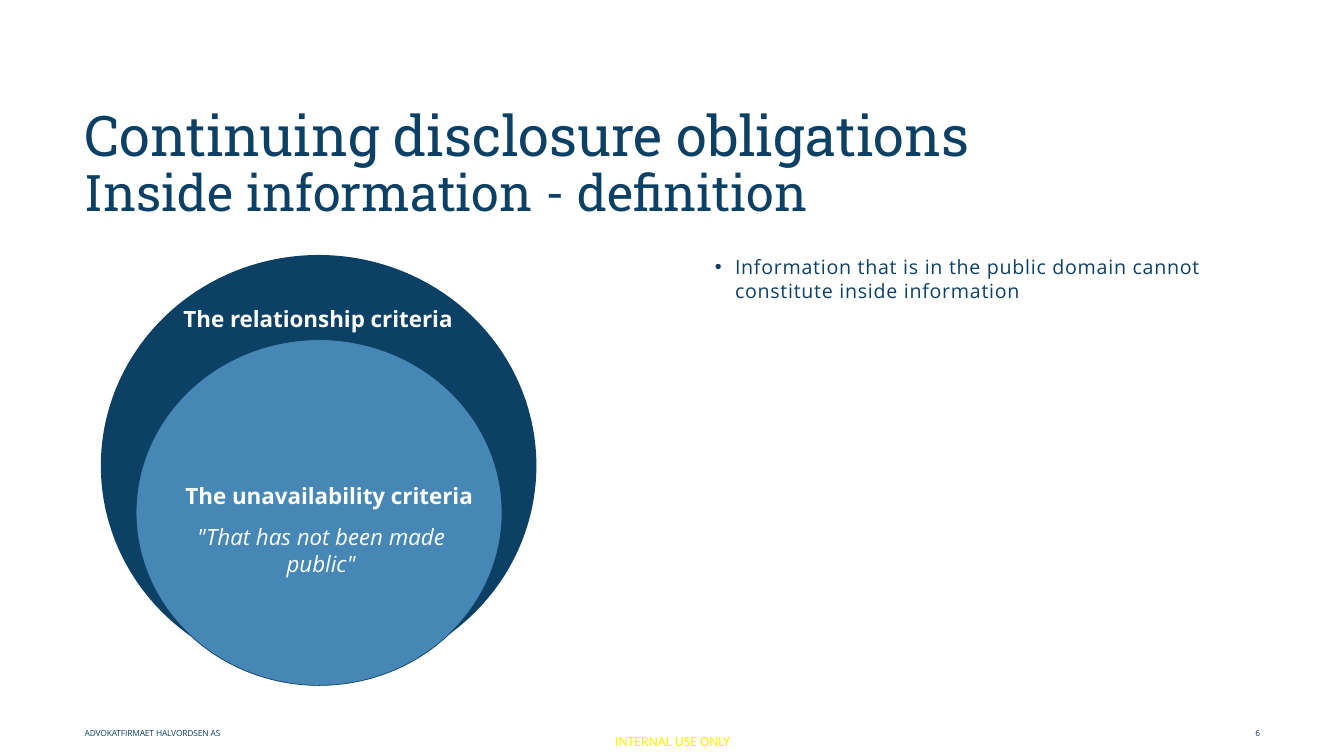
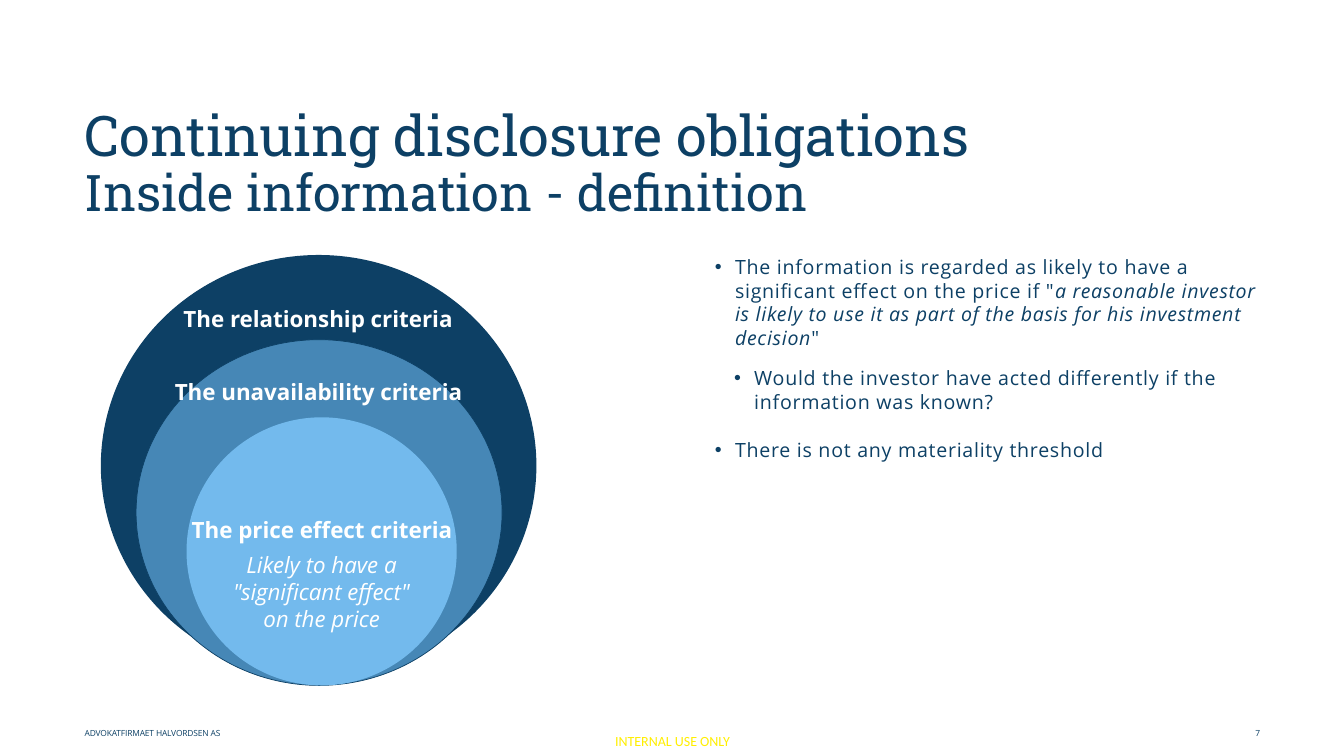
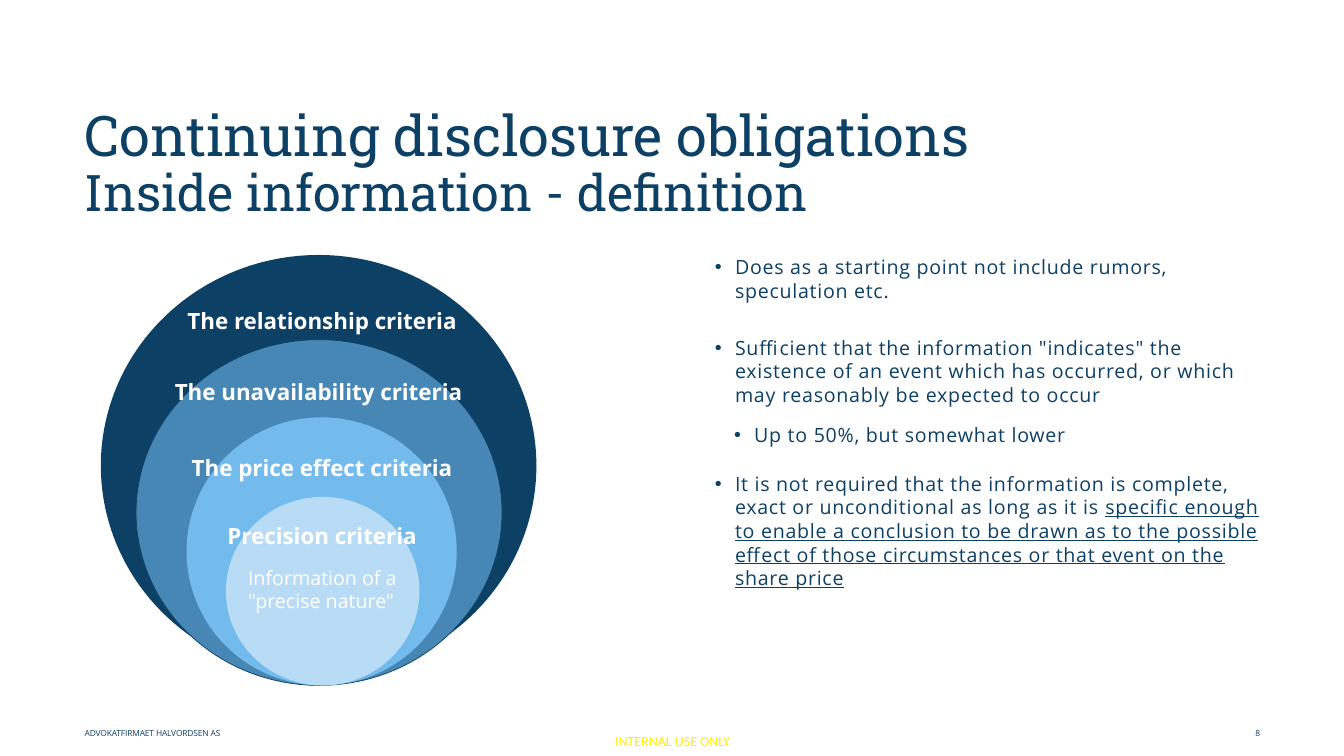
from lxml import etree
from pptx import Presentation
from pptx.dml.color import RGBColor
from pptx.enum.shapes import MSO_SHAPE
from pptx.enum.text import MSO_ANCHOR, MSO_AUTO_SIZE, PP_ALIGN
from pptx.oxml.ns import qn
from pptx.util import Inches, Pt

OVAL = MSO_SHAPE.OVAL
TOP, MIDDLE, BOTTOM = MSO_ANCHOR.TOP, MSO_ANCHOR.MIDDLE, MSO_ANCHOR.BOTTOM
LEFT, CENTER, RIGHT = PP_ALIGN.LEFT, PP_ALIGN.CENTER, PP_ALIGN.RIGHT
FIXED = MSO_AUTO_SIZE.NONE

NAVY, STEEL, SKY, PALE = "0D4065", "4687B6", "73BAED", "B9DCF6"
WHITE, YELLOW = "FFFFFF", "FFEF00"
HEAD, BODY, MARK = "Roboto Slab", "Open Sans", "Calibri"
EDGE, WIDE = 0.84, 11.66

RINGS = [
    (1, 2.53, 4.32, 4.18, NAVY, None),
    (1.35, 3.37, 3.63, 3.43, STEEL, NAVY),
    (1.85, 4.14, 2.68, 2.66, SKY, None),
    (2.24, 4.93, 1.92, 1.87, PALE, None),
]
RELATION = "The relationship criteria"
UNKNOWN = "The unavailability criteria"
PRICE = "The price effect criteria"

PAGES = [
    {
        "labels": [(1.78, 3.03, 2.75, RELATION), (1.71, 4.78, 3.11, UNKNOWN)],
        "quote": (1.63, 5.19, 3.11, 0.54, '"That has not been made public"'),
        "points": [
            (0, [("Information that is in the public domain cannot constitute inside information", "")]),
        ],
    },
    {
        "labels": [(1.78, 3.03, 2.75, RELATION), (1.58, 3.75, 3.16, UNKNOWN), (1.38, 5.12, 3.63, PRICE)],
        "quote": (2.19, 5.47, 2, 1.16, 'Likely to have a "significant effect" on the price'),
        "points": [
            (0, [
                ('The information is regarded as likely to have a significant effect on the price if "', ""),
                ("a reasonable investor is likely to use it as part of the basis for his investment decision", "i"),
                ('"', ""),
            ]),
            (1, [("Would the investor have acted differently if the information was known?", "")]),
            (0, [("There is not any materiality threshold", "")]),
        ],
    },
    {
        "labels": [
            (1.82, 3.05, 2.75, RELATION),
            (1.58, 3.75, 3.16, UNKNOWN),
            (1.38, 4.51, 3.63, PRICE),
            (1.16, 5.18, 4.07, "Precision criteria"),
        ],
        "note": (2.46, 5.61, 1.92, 0.47, 'Information of a "precise nature"'),
        "points": [
            (0, [("Does as a starting point not include rumors, speculation etc.", "")]),
            (0, [(
                'Sufficient that the information "indicates" the existence of an event '
                "which has occurred, or which may reasonably be expected to occur", "",
            )]),
            (1, [("Up to 50%, but somewhat lower", "")]),
            (0, [
                ("It is not required that the information is complete, exact or "
                 "unconditional as long as it is ", ""),
                ("specific enough to enable a conclusion to be drawn as to the possible "
                 "effect of those circumstances or that event on the share price", "u"),
            ]),
        ],
    },
]


def color(code):
    """Turn a hex string into a colour."""
    return RGBColor.from_string(code)


class Deck:
    """Hold the style and the current slide."""

    def __init__(self):
        """Start an empty wide deck."""
        self.file = Presentation()
        self.file.slide_width = Inches(13.33)
        self.file.slide_height = Inches(7.5)
        self.slide = None

    def page(self, number):
        """Add a slide with its title, footer and marking."""
        self.slide = self.file.slides.add_slide(self.file.slide_layouts[5])
        self.title("Continuing disclosure obligations", "Inside information - definition")
        self.footer(number)
        self.text(5.93, 7.21, 1.48, 0.29, "INTERNAL USE ONLY", 10, YELLOW, MARK, CENTER, MIDDLE)

    def frame(self, shape, anchor=TOP):
        """Strip the margins of a text frame and return it."""
        frame = shape.text_frame
        frame.margin_left = frame.margin_right = frame.margin_top = frame.margin_bottom = 0
        frame.word_wrap = True
        frame.auto_size = FIXED
        frame.vertical_anchor = anchor
        return frame

    def box(self, x, y, w, h, anchor=TOP):
        """Add a text box and return its frame."""
        shape = self.slide.shapes.add_textbox(Inches(x), Inches(y), Inches(w), Inches(h))
        return self.frame(shape, anchor)

    def style(self, para, size, code, face, bold=None, italic=None, space=None):
        """Set the font of a paragraph."""
        font = para.font
        font.size, font.name = Pt(size), face
        font.bold, font.italic = bold, italic
        font.color.rgb = color(code)
        if space is not None:
            para._p.pPr.find(qn("a:defRPr")).set("spc", str(space))

    def title(self, main, sub):
        """Fill the title with a main line and a smaller second line."""
        shape = self.slide.shapes.title
        shape.left, shape.top = Inches(EDGE), Inches(1.07)
        shape.width, shape.height = Inches(WIDE), Inches(1.22)
        para = self.frame(shape).paragraphs[0]
        para.alignment, para.line_spacing = LEFT, 0.9
        self.style(para, 40, NAVY, HEAD)
        para.add_run().text = main
        para.add_line_break()
        run = para.add_run()
        run.text, run.font.size = sub, Pt(36)

    def text(self, x, y, w, h, words, size, code, face, align=LEFT, anchor=TOP, bold=None, italic=None):
        """Add a text box of one paragraph."""
        para = self.box(x, y, w, h, anchor).paragraphs[0]
        para.text, para.alignment = words, align
        self.style(para, size, code, face, bold, italic)

    def footer(self, number):
        """Add the firm name and the slide number on one tabbed line."""
        para = self.box(EDGE, 7.2, WIDE, 0.12, BOTTOM).paragraphs[0]
        para.text, para.alignment = f"ADVOKATFIRMAET HALVORDSEN AS\t{number}", RIGHT
        tabs = etree.SubElement(para._p.get_or_add_pPr(), qn("a:tabLst"))
        etree.SubElement(tabs, qn("a:tab"), pos=str(Inches(WIDE)), algn="r")
        self.style(para, 6, NAVY, BODY, space=-10)

    def ring(self, x, y, w, h, fill, line):
        """Add a filled ellipse with an optional thin outline."""
        shape = self.slide.shapes.add_shape(OVAL, Inches(x), Inches(y), Inches(w), Inches(h))
        shape.shadow.inherit = False
        shape.fill.solid()
        shape.fill.fore_color.rgb = color(fill)
        if line:
            shape.line.color.rgb = color(line)
            shape.line.width = Pt(0.5)
        else:
            shape.line.fill.background()

    def label(self, x, y, w, words):
        """Add the bold name of a ring."""
        self.text(x, y, w, 0.27, words, 16, WHITE, BODY, CENTER, bold=True)

    def points(self, items):
        """Add the bulleted list on the right."""
        frame = self.box(7.09, 2.53, 5.41, 4.13)
        for index, (level, parts) in enumerate(items):
            para = frame.add_paragraph() if index else frame.paragraphs[0]
            para.level = level
            para.space_before = Pt((6 if level else 18) if index else 0)
            para.space_after = Pt(0 if level else 6)
            props = para._p.get_or_add_pPr()
            props.set("marL", str(Inches(0.39 if level else 0.2)))
            props.set("indent", str(Inches(-0.2)))
            etree.SubElement(props, qn("a:buFont"), typeface="Arial")
            etree.SubElement(props, qn("a:buChar"), char="•")
            self.style(para, 14, NAVY, BODY, space=50)
            for words, mark in parts:
                run = para.add_run()
                run.text = words
                if mark == "i":
                    run.font.italic = True
                elif mark == "u":
                    run.font.underline = True


def main():
    """Build and save the deck."""
    deck = Deck()
    for number, page in enumerate(PAGES, 6):
        deck.page(number)
        deck.points(page["points"])
        for ring, label in zip(RINGS, page["labels"]):
            deck.ring(*ring)
            deck.label(*label)
        if "quote" in page:
            deck.text(*page["quote"], 16, WHITE, BODY, CENTER, italic=True)
        if "note" in page:
            deck.text(*page["note"], 14, WHITE, BODY)
    deck.file.save("out.pptx")


if __name__ == "__main__":
    main()
